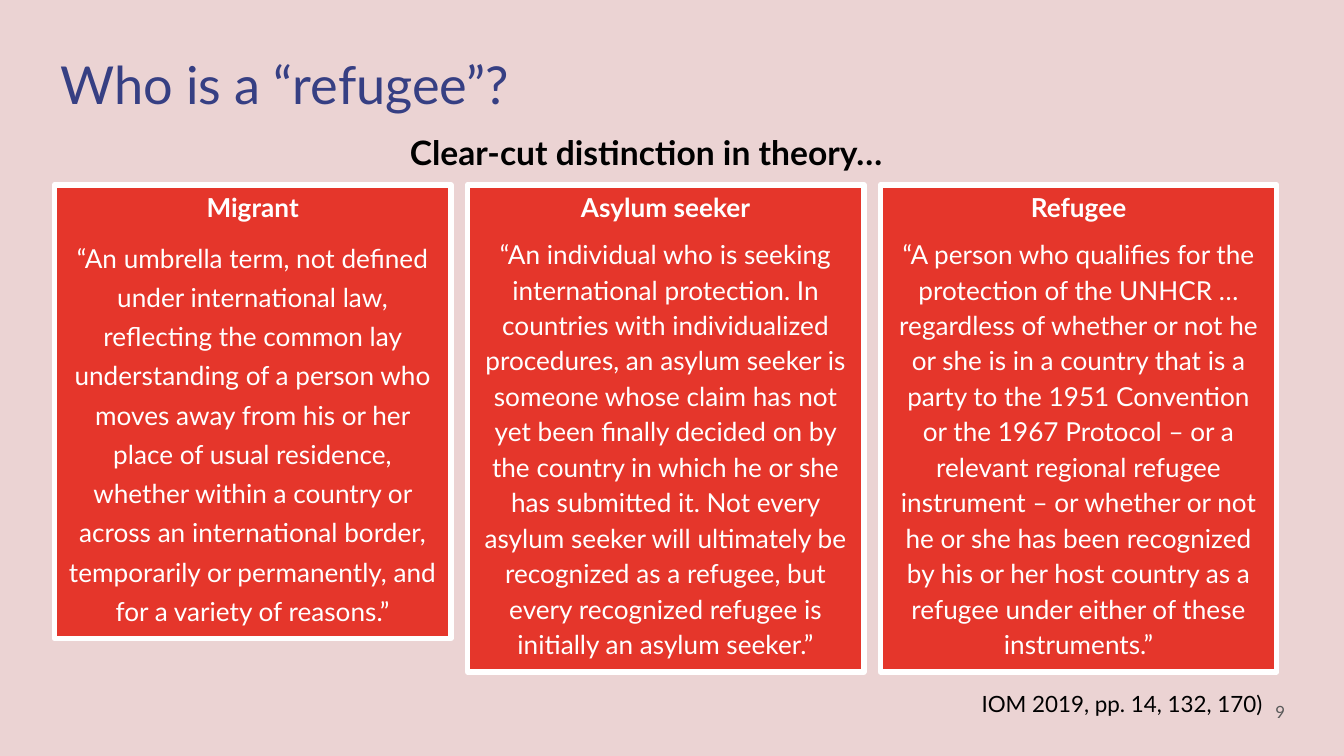
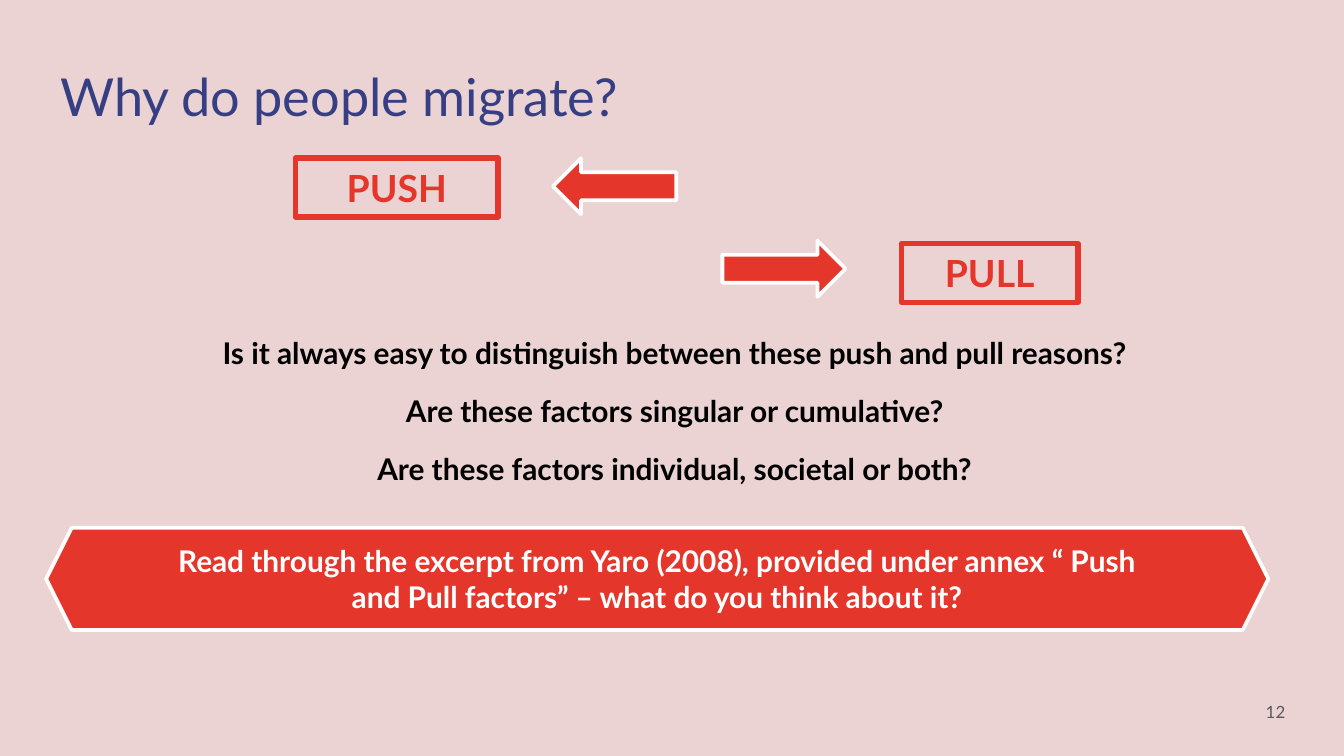
from pptx import Presentation
from pptx.dml.color import RGBColor
from pptx.enum.shapes import MSO_SHAPE
from pptx.enum.text import MSO_ANCHOR, MSO_AUTO_SIZE, PP_ALIGN
from pptx.util import Pt

PX = 9525  # EMU in one pixel, 96 pixels to the inch
FONT = "Lato"
PINK = RGBColor(0xEB, 0xD3, 0xD3)
RED = RGBColor(0xE5, 0x36, 0x2B)
NAVY = RGBColor(0x36, 0x3F, 0x83)
GREY = RGBColor(0x59, 0x59, 0x59)
WHITE = RGBColor(0xFF, 0xFF, 0xFF)
BLACK = RGBColor(0x00, 0x00, 0x00)


def write(shape, texts, size, color, bold=False, align=PP_ALIGN.CENTER,
          anchor=MSO_ANCHOR.TOP, inset=5):
    """Fill a shape with one paragraph per text; inset is the top and bottom margin in px."""
    frame = shape.text_frame
    frame.word_wrap = True
    frame.auto_size = MSO_AUTO_SIZE.NONE
    frame.vertical_anchor = anchor
    frame.margin_left = frame.margin_right = 10 * PX
    frame.margin_top = frame.margin_bottom = inset * PX
    for index, text in enumerate(texts):
        paragraph = frame.add_paragraph() if index else frame.paragraphs[0]
        paragraph.alignment = align
        run = paragraph.add_run()
        run.text = text
        run.font.name = FONT
        run.font.size = Pt(size)
        run.font.bold = bold
        run.font.color.rgb = color
    return frame.paragraphs


def add_box(slide, kind, place, fill, line, weight):
    shape = slide.shapes.add_shape(kind, *(value * PX for value in place))
    shape.shadow.inherit = False
    if fill is None:
        shape.fill.background()
    else:
        shape.fill.solid()
        shape.fill.fore_color.rgb = fill
    shape.line.color.rgb = line
    shape.line.width = Pt(weight)
    return shape


presentation = Presentation()
presentation.slide_width = 960 * PX
presentation.slide_height = 540 * PX
background = presentation.slide_master.background.fill
background.solid()
background.fore_color.rgb = PINK
title_only = presentation.slide_layouts[5]

# Titles and page numbers
slides = []
for heading, top, number in [("Who is a “refugee”?", 27, "9"),
                             ("Why do people migrate?", 36, "12")]:
    slide = presentation.slides.add_slide(title_only)
    title = slide.shapes.title
    title.left, title.top, title.width, title.height = 33 * PX, top * PX, 714 * PX, 60 * PX
    write(title, [heading], 28, NAVY, align=PP_ALIGN.LEFT, inset=10)
    page_number = slide.shapes.add_textbox(870 * PX, 488 * PX, 58 * PX, 41 * PX)
    write(page_number, [number], 9, GREY, align=PP_ALIGN.RIGHT,
          anchor=MSO_ANCHOR.MIDDLE, inset=10)
    slides.append(slide)
definitions_slide, reasons_slide = slides

# Three definitions side by side
subtitle = definitions_slide.shapes.add_textbox(176 * PX, 80 * PX, 571 * PX, 53 * PX)
write(subtitle, ["Clear-cut distinction in theory…"], 18, BLACK, bold=True,
      inset=10)[0].line_spacing = 1.15

definitions = [
    ("Migrant", 324, 21,
     "“An umbrella term, not defined under international law, reflecting the common lay "
     "understanding of a person who moves away from his or her place of usual residence, "
     "whether within a country or across an international border, temporarily or "
     "permanently, and for a variety of reasons.”"),
    ("Asylum seeker", 348, 19,
     "“An individual who is seeking international protection. In countries with "
     "individualized procedures, an asylum seeker is someone whose claim has not yet been "
     "finally decided on by the country in which he or she has submitted it. Not every "
     "asylum seeker will ultimately be recognized as a refugee, but every recognized "
     "refugee is initially an asylum seeker.”"),
    ("Refugee", 348, 19,
     "“A person who qualifies for the protection of the UNHCR … regardless of whether or "
     "not he or she is in a country that is a party to the 1951 Convention or the 1967 "
     "Protocol – or a relevant regional refugee instrument – or whether or not he or she "
     "has been recognized by his or her host country as a refugee under either of these "
     "instruments.”"),
]
for column, (term, height, spacing, definition) in enumerate(definitions):
    card = add_box(definitions_slide, MSO_SHAPE.RECTANGLE,
                   (39 + 295 * column, 132, 283, height), RED, WHITE, 3)
    term_line, body = write(card, [term, definition], 14, WHITE)
    term_line.runs[0].font.bold = True
    term_line.space_after = Pt(6)
    body.line_spacing = Pt(spacing)

citation = definitions_slide.shapes.add_textbox(334 * PX, 488 * PX, 578 * PX, 29 * PX)
write(citation, ["IOM 2019, pp. 14, 132, 170)"], 12, BLACK, align=PP_ALIGN.RIGHT)

# Push and pull, each with its arrow
for word, label_place, arrow_place, rotation in [
    ("PUSH", (211, 113, 145, 42), (395, 113, 88, 40), 180),
    ("PULL", (644, 174, 126, 42), (516, 172, 88, 40), 0),
]:
    label = add_box(reasons_slide, MSO_SHAPE.RECTANGLE, label_place, None, RED, 3)
    write(label, [word], 20, RED, bold=True)
    arrow = add_box(reasons_slide, MSO_SHAPE.RIGHT_ARROW, arrow_place, RED, WHITE, 2)
    arrow.rotation = rotation

questions = reasons_slide.shapes.add_textbox(114 * PX, 234 * PX, 736 * PX, 120 * PX)
question_lines = write(questions, [
    "Is it always easy to distinguish between these push and pull reasons?",
    "Are these factors singular or cumulative?",
    "Are these factors individual, societal or both?",
], 16, BLACK, bold=True)
for index, paragraph in enumerate(question_lines):
    paragraph.space_before = Pt(6 if index else 0)
    paragraph.space_after = Pt(6)

task = add_box(reasons_slide, MSO_SHAPE.HEXAGON, (33, 377, 873, 73), RED, WHITE, 2)
task.adjustments[0] = 0.25
write(task, ["Read through the excerpt from Yaro (2008), provided under annex “ Push and Pull "
             "factors” – what do you think about it?"],
      16, WHITE, bold=True, anchor=MSO_ANCHOR.MIDDLE)

presentation.save("out.pptx")
